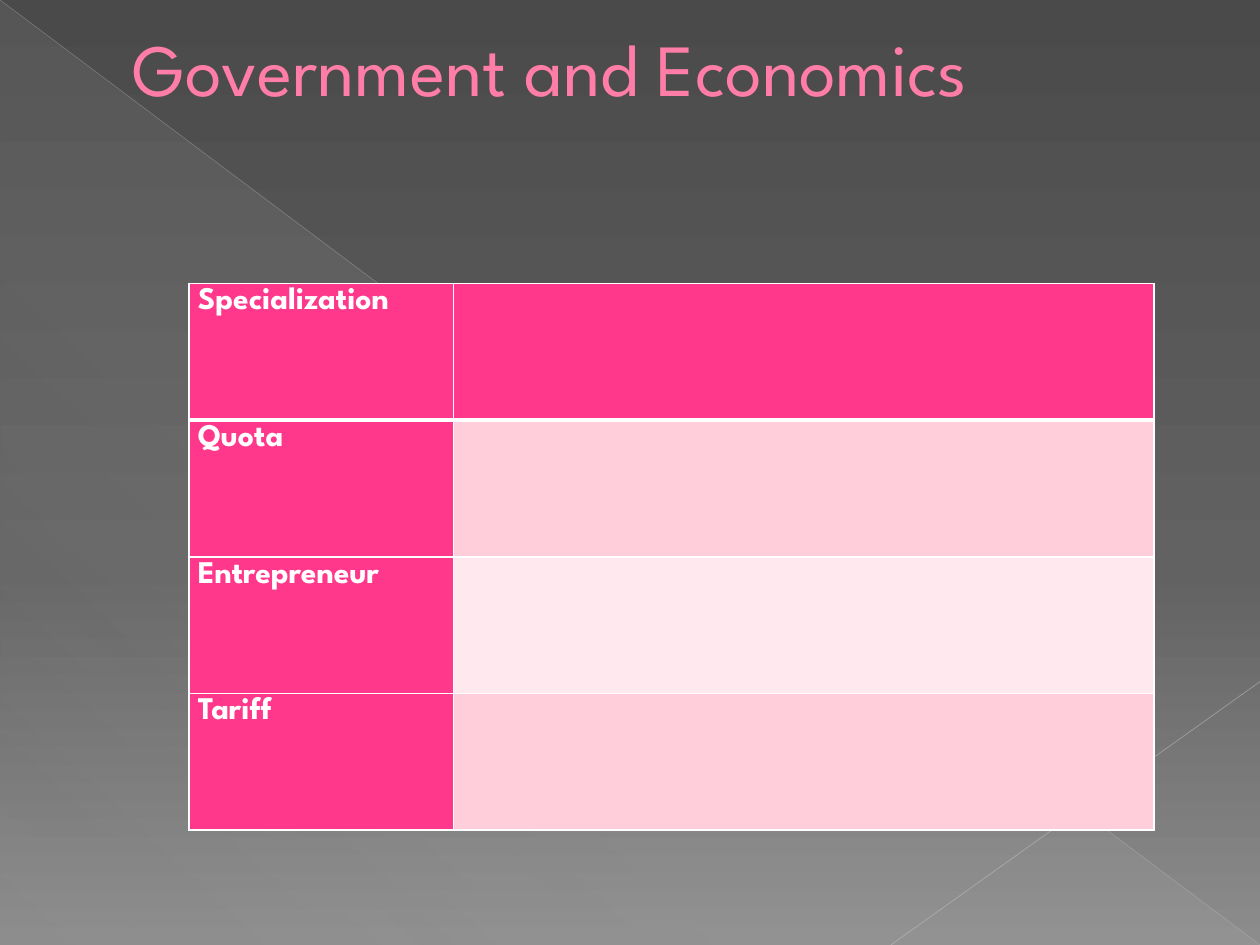
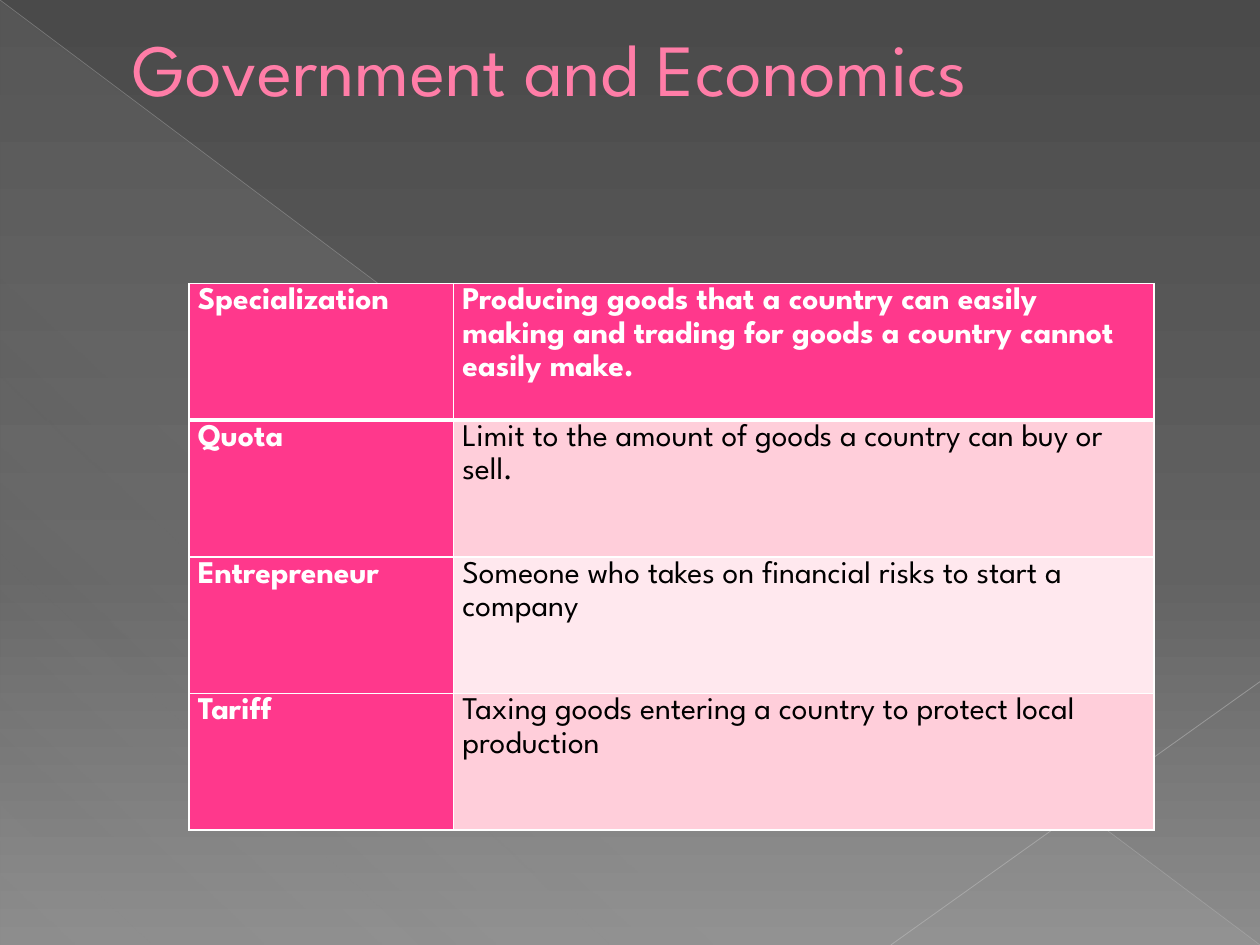
from lxml.etree import SubElement
from pptx import Presentation
from pptx.dml.color import RGBColor
from pptx.enum.shapes import MSO_CONNECTOR, MSO_SHAPE
from pptx.enum.text import MSO_ANCHOR, PP_ALIGN
from pptx.oxml.ns import qn
from pptx.util import Emu, Inches, Pt

TITLE = "Government and Economics"
GLOSSARY = [
    ("Specialization", "Producing goods that a country can easily making and "
                       "trading for goods a country cannot easily make."),
    ("Quota", "Limit to the amount of goods a country can buy or sell."),
    ("Entrepreneur", "Someone who takes on financial risks to start a company"),
    ("Tariff", "Taxing goods entering a country to protect local production"),
]
TERMS_ONLY = [(term, "") for term, _ in GLOSSARY]

FONT = "League Spartan"
WHITE = RGBColor(0xFF, 0xFF, 0xFF)
BLACK = RGBColor(0x00, 0x00, 0x00)
TITLE_PINK = RGBColor(0xFF, 0x7D, 0xA7)
HOT_PINK = RGBColor(0xFF, 0x38, 0x8C)
BANDS = [RGBColor(0xFF, 0xE8, 0xEE), RGBColor(0xFF, 0xCE, 0xDA)]
HAZE = RGBColor(0xD2, 0xD2, 0xD2)
DIAGONAL_GREY = RGBColor(0xBF, 0xBF, 0xBF)
CORNER_GREY = RGBColor(0xC6, 0xC6, 0xC6)
BACKDROP = [(0, RGBColor(0x4A, 0x4A, 0x4A), 100),
            (60, RGBColor(0x62, 0x62, 0x62), 100),
            (100, RGBColor(0x8C, 0x8C, 0x8C), 100)]
HAZE_STOPS = [(0, HAZE, 10), (70, HAZE, 8), (100, HAZE, 1)]

WIDTH, HEIGHT = Inches(10), Inches(7.5)
TITLE_BOX = Inches(0.42), Inches(0.01), Inches(9), Inches(1.04)
TABLE_BOX = Inches(1.5), Inches(2.25), Inches(7.66), Inches(4.34)
TERM_WIDTH = Inches(2.1)


def set_alpha(colour, percent):
    SubElement(colour, qn("a:alpha"), val=str(percent * 1000))


def set_gradient(fill, element, stops, clockwise):
    fill.gradient()
    fill.gradient_angle = 360 - clockwise
    stop_list = element.find(".//" + qn("a:gsLst"))
    for stop in list(stop_list):
        stop_list.remove(stop)
    for position, rgb, opacity in stops:
        stop = SubElement(stop_list, qn("a:gs"), pos=str(position * 1000))
        set_alpha(SubElement(stop, qn("a:srgbClr"), val=str(rgb)), opacity)


def add_hairline(slide, start, end, rgb, points, opacity):
    hairline = slide.shapes.add_connector(MSO_CONNECTOR.STRAIGHT, *start, *end)
    hairline.line.color.rgb = rgb
    hairline.line.width = Pt(points)
    properties = hairline.element.spPr
    set_alpha(properties.find(".//" + qn("a:srgbClr")), opacity)
    SubElement(properties, qn("a:effectLst"))
    return hairline


def decorate_layout(layout, slide):
    master = layout.slide_master
    set_gradient(master.background.fill, master.element, BACKDROP, 90)
    haze = slide.shapes.add_shape(MSO_SHAPE.RIGHT_TRIANGLE, 0, 0, WIDTH, HEIGHT)
    set_gradient(haze.fill, haze.element.spPr, HAZE_STOPS, 133)
    haze.line.fill.background()
    haze.shadow.inherit = False
    diagonal = add_hairline(slide, (0, 0), (WIDTH, HEIGHT), DIAGONAL_GREY, 0.39, 35)
    corner = add_hairline(slide, (WIDTH, Inches(5.41)), (Inches(7.07), HEIGHT),
                          CORNER_GREY, 0.47, 45)
    for part in (haze, diagonal, corner):
        layout.shapes.element.append(part.element)


def style_paragraph(paragraph, size, rgb, bold=False):
    paragraph.alignment = PP_ALIGN.LEFT
    paragraph.font.name = FONT
    paragraph.font.size = Pt(size)
    paragraph.font.color.rgb = rgb
    paragraph.font.bold = bold


def set_title(slide):
    title = slide.shapes.title
    title.left, title.top, title.width, title.height = TITLE_BOX
    title.text_frame.text = TITLE
    title.text_frame.vertical_anchor = MSO_ANCHOR.MIDDLE
    heading = title.text_frame.paragraphs[0]
    style_paragraph(heading, 42, TITLE_PINK)
    heading._p.get_or_add_pPr().set("marL", str(Inches(0.53)))


def set_borders(cell, **points):
    properties = cell._tc.get_or_add_tcPr()
    for side in "LRTB":
        border = SubElement(properties, qn("a:ln" + side), w=str(Pt(points.get(side, 1))))
        fill = SubElement(border, qn("a:solidFill"))
        SubElement(fill, qn("a:srgbClr"), val=str(WHITE))


def add_glossary(slide, entries):
    table = slide.shapes.add_table(len(entries), 2, *TABLE_BOX).table
    table.columns[0].width = TERM_WIDTH
    table.columns[1].width = TABLE_BOX[2] - TERM_WIDTH
    for row, entry in enumerate(entries):
        table.rows[row].height = Emu(TABLE_BOX[3] // len(entries))
        for column, words in enumerate(entry):
            cell = table.cell(row, column)
            heading = row == 0 or column == 0
            set_borders(cell, B=3 if row == 0 else 1, T=3 if row == 1 else 1)
            cell.fill.solid()
            cell.fill.fore_color.rgb = HOT_PINK if heading else BANDS[row % 2]
            cell.margin_left = cell.margin_right = Inches(0.07)
            cell.margin_top = cell.margin_bottom = 0
            cell.text = words
            paragraph = cell.text_frame.paragraphs[0]
            style_paragraph(paragraph, 18, WHITE if heading else BLACK, heading)
            paragraph.line_spacing = 1.15


def main():
    deck = Presentation()
    deck.slide_width, deck.slide_height = WIDTH, HEIGHT
    layout = deck.slide_layouts[5]
    for entries in (TERMS_ONLY, GLOSSARY):
        slide = deck.slides.add_slide(layout)
        set_title(slide)
        add_glossary(slide, entries)
    decorate_layout(layout, slide)
    deck.save("out.pptx")


if __name__ == "__main__":
    main()
